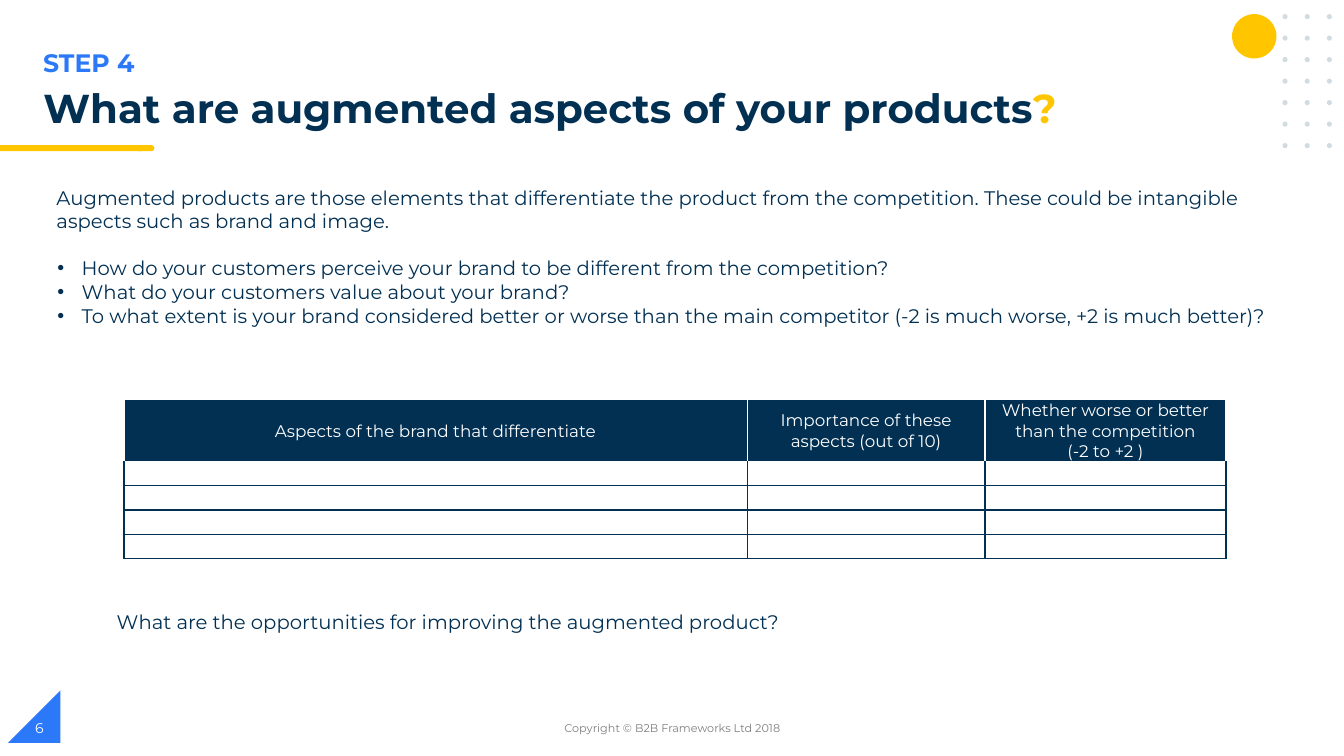
from dataclasses import dataclass

from lxml import etree
from pptx import Presentation
from pptx.dml.color import RGBColor
from pptx.enum.shapes import MSO_SHAPE
from pptx.enum.text import MSO_ANCHOR, MSO_AUTO_SIZE, PP_ALIGN
from pptx.oxml.ns import qn
from pptx.util import Inches, Pt

OVAL = MSO_SHAPE.OVAL
RECTANGLE = MSO_SHAPE.RECTANGLE
TERMINATOR = MSO_SHAPE.FLOWCHART_TERMINATOR
RIGHT_TRIANGLE = MSO_SHAPE.RIGHT_TRIANGLE
LEFT, CENTER = PP_ALIGN.LEFT, PP_ALIGN.CENTER
TOP, MIDDLE = MSO_ANCHOR.TOP, MSO_ANCHOR.MIDDLE
NO_AUTOFIT = MSO_AUTO_SIZE.NONE


@dataclass(frozen=True)
class Theme:
    font: str = "Montserrat"
    navy: str = "023053"
    blue: str = "2B79F8"
    yellow: str = "FFC600"
    dot: str = "D1DBE0"
    gray: str = "7F7F7F"
    white: str = "FFFFFF"
    title: float = 28.8
    step: float = 18
    body: float = 14
    table: float = 12
    number: float = 10
    footer: float = 8


theme = Theme()


def style_text(frame, size, color, bold=False, align=LEFT):
    for para in frame.paragraphs:
        para.alignment = align
        for span in para.runs:
            span.font.name = theme.font
            span.font.size = Pt(size)
            span.font.bold = bold
            span.font.color.rgb = RGBColor.from_string(color)


def add_shape(kind, left, top, width, height, color):
    shape = page.shapes.add_shape(
        kind, Inches(left), Inches(top), Inches(width), Inches(height))
    shape.shadow.inherit = False
    shape.fill.solid()
    shape.fill.fore_color.rgb = RGBColor.from_string(color)
    shape.line.fill.background()
    return shape


deck = Presentation()
deck.slide_width, deck.slide_height = Inches(13.33), Inches(7.5)
page = deck.slides.add_slide(deck.slide_layouts[1])

# Corner decoration: triangle, yellow disc and dot grid
triangle = add_shape(RIGHT_TRIANGLE, 0.08, 6.85, 0.52, 0.52, theme.blue)
triangle._element.spPr.find(qn("a:xfrm")).set("flipH", "1")
add_shape(OVAL, 12.22, 0.14, 0.44, 0.44, theme.yellow)
for row in range(7):
    for column in range(3):
        add_shape(OVAL, 12.72 + 0.22 * column, 0.14 + 1.28 * row / 6,
                  0.05, 0.05, theme.dot)

# Rule under the title with a rounded right end
add_shape(TERMINATOR, 1.34, 1.44, 0.19, 0.06, theme.yellow)
add_shape(RECTANGLE, 0, 1.44, 1.41, 0.06, theme.yellow)

# Title
title = page.shapes.title
title.left, title.top = Inches(0.33), Inches(0.82)
title.width, title.height = Inches(11.24), Inches(0.56)
frame = title.text_frame
frame.auto_size = NO_AUTOFIT
frame.vertical_anchor = MIDDLE
para = frame.paragraphs[0]
para.line_spacing = 0.9
for text in ("What are augmented aspects of your products", "?"):
    para.add_run().text = text
style_text(frame, theme.title, theme.navy, bold=True)
para.runs[1].font.color.rgb = RGBColor.from_string(theme.yellow)

# Introduction and bulleted questions
body = page.placeholders[1]
body.left, body.top = Inches(0.46), Inches(1.79)
body.width, body.height = Inches(12.5), Inches(1.52)
frame = body.text_frame
frame.auto_size = NO_AUTOFIT
frame.vertical_anchor = TOP
frame.text = "\n".join([
    "Augmented products are those elements that differentiate the product from "
    "the competition. These could be intangible aspects such as brand and image.",
    "How do your customers perceive your brand to be different from the competition?",
    "What do your customers value about your brand?",
    "To what extent is your brand considered better or worse than the main "
    "competitor (-2 is much worse, +2 is much better)?",
])
style_text(frame, theme.body, theme.navy)
for index, para in enumerate(frame.paragraphs):
    para.space_before = Pt(17 if index == 1 else 0)
    properties = para._p.get_or_add_pPr()
    if index == 0:
        properties.set("marL", "0")
        properties.set("indent", "0")
        etree.SubElement(properties, qn("a:buNone"))
    else:
        properties.set("marL", str(Inches(0.25)))
        properties.set("indent", str(Inches(-0.24)))
        color = etree.SubElement(properties, qn("a:buClr"))
        etree.SubElement(color, qn("a:srgbClr"), val=theme.navy)
        etree.SubElement(properties, qn("a:buFont"), typeface="Arial")
        etree.SubElement(properties, qn("a:buChar"), char="•")

# Table of brand aspects
headings = [
    "Aspects of the brand that differentiate",
    "Importance of these aspects (out of 10)",
    "Whether worse or better than the competition\v(-2 to +2 )",
]
column_widths = [6.18, 2.36, 2.39]
row_heights = [0.61] + [0.24] * 4
table = page.shapes.add_table(
    len(row_heights), len(column_widths), Inches(1.23), Inches(3.96),
    Inches(sum(column_widths)), Inches(sum(row_heights))).table
table.first_row = table.horz_banding = False
for column, width in zip(table.columns, column_widths):
    column.width = Inches(width)
for row_index, height in enumerate(row_heights):
    table.rows[row_index].height = Inches(height)
    is_header = row_index == 0
    for column_index, heading in enumerate(headings):
        cell = table.cell(row_index, column_index)
        cell.vertical_anchor = MIDDLE
        cell.margin_left = cell.margin_right = cell.margin_top = Inches(0.01)
        cell.margin_bottom = 0
        for side in ("lnL", "lnR", "lnT", "lnB"):
            is_white = is_header or (row_index == 1 and side == "lnT")
            line = etree.SubElement(
                cell._tc.get_or_add_tcPr(), qn(f"a:{side}"), w=str(Pt(1)))
            fill = etree.SubElement(line, qn("a:solidFill"))
            etree.SubElement(fill, qn("a:srgbClr"),
                             val=theme.white if is_white else theme.navy)
        if is_header:
            cell.fill.solid()
            cell.fill.fore_color.rgb = RGBColor.from_string(theme.navy)
            cell.text_frame.text = heading
            style_text(cell.text_frame, theme.table, theme.white, align=CENTER)
        else:
            cell.fill.background()
            end = cell.text_frame.paragraphs[0]._p.get_or_add_endParaRPr()
            end.set("sz", str(theme.number * 100))

# Step label, closing question, copyright line and page number
labels = [
    ("STEP 4", 0.33, 0.42, 6.69, 0.4, theme.step, theme.blue, True, LEFT, TOP),
    ("What are the opportunities for improving the augmented product?",
     1.06, 6, 9.03, 0.34, theme.body, theme.navy, False, LEFT, TOP),
    ("Copyright © B2B Frameworks Ltd 2018",
     4.42, 7.02, 4.5, 0.4, theme.footer, theme.gray, False, CENTER, MIDDLE),
    ("6", 0.25, 7.02, 3, 0.4, theme.number, theme.white, False, LEFT, MIDDLE),
]
for text, left, top, width, height, size, color, bold, align, anchor in labels:
    box = page.shapes.add_textbox(
        Inches(left), Inches(top), Inches(width), Inches(height))
    frame = box.text_frame
    frame.word_wrap = True
    frame.vertical_anchor = anchor
    frame.text = text
    style_text(frame, size, color, bold, align)

deck.save("out.pptx")
